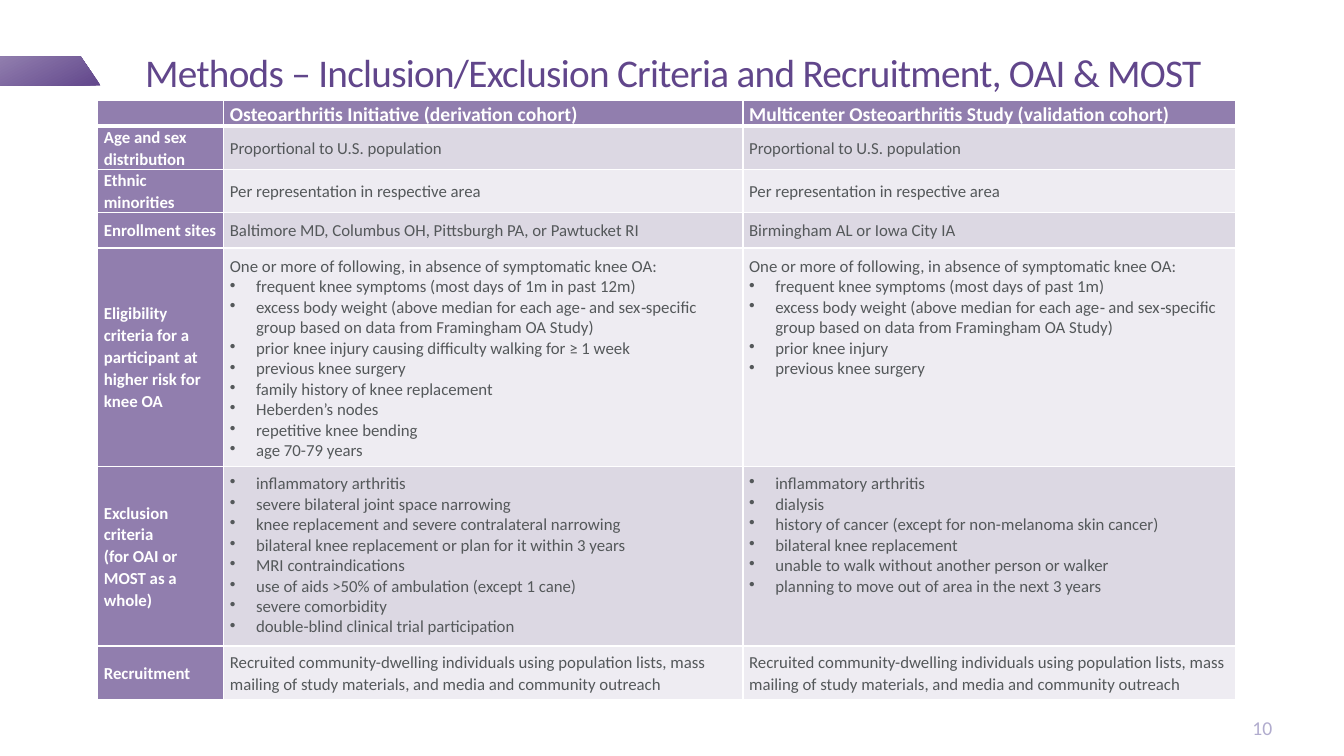
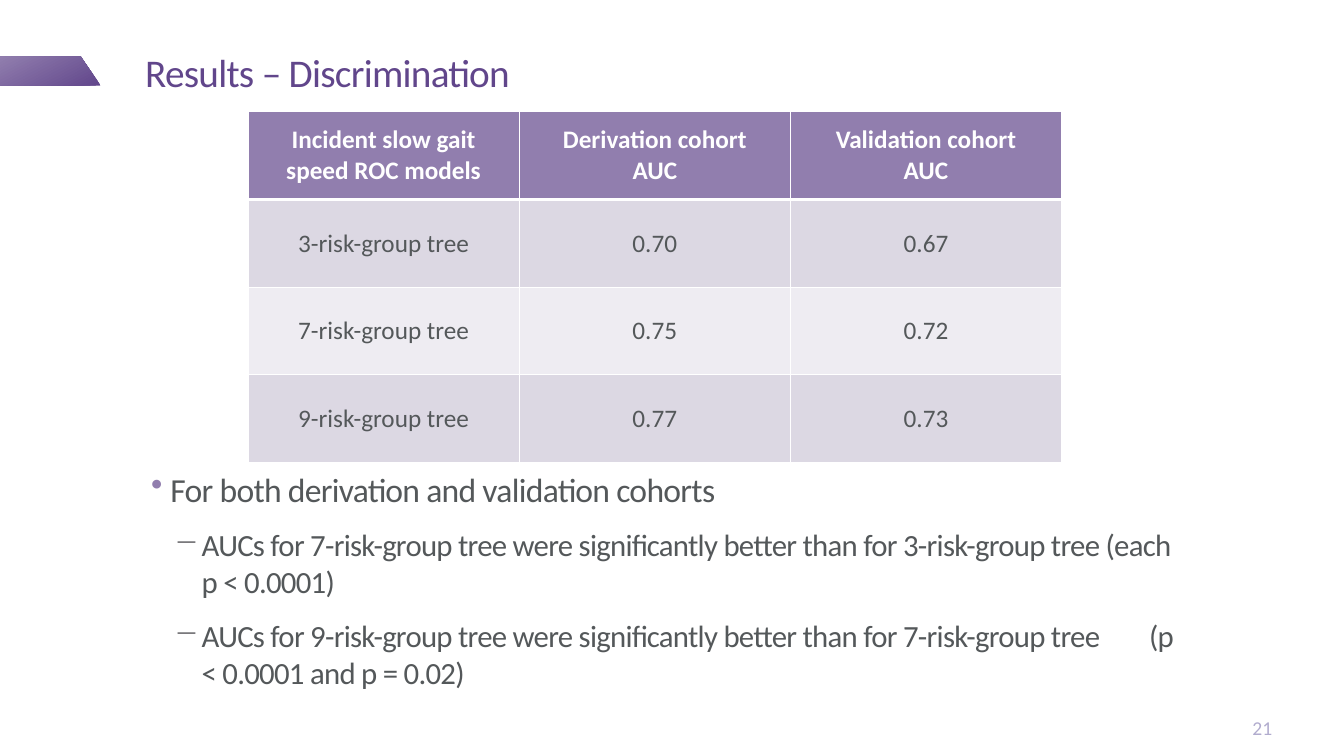
from lxml import etree
from pptx import Presentation
from pptx.dml.color import RGBColor
from pptx.enum.text import MSO_ANCHOR, PP_ALIGN
from pptx.oxml.ns import qn
from pptx.util import Inches, Pt

LEFT, CENTER, RIGHT = PP_ALIGN.LEFT, PP_ALIGN.CENTER, PP_ALIGN.RIGHT
TOP, MIDDLE, BOTTOM = MSO_ANCHOR.TOP, MSO_ANCHOR.MIDDLE, MSO_ANCHOR.BOTTOM

PURPLE, VIOLET, LILAC = "61468B", "917EAE", "B1ACCE"
WHITE, GRAY, DASH_GRAY = "FFFFFF", "54585A", "605F62"
BANDS = ("DCD8E3", "EEECF2")
BULLET = "• "
TIGHT = -50
WIDE_GAP = 3000


def rgb(value):
    return RGBColor.from_string(value)


def apply(target, values):
    for name, value in values.items():
        setattr(target, name, value)


def add_color(parent, tag, color):
    element = etree.SubElement(parent, qn(tag))
    etree.SubElement(element, qn("a:srgbClr")).set("val", color)


class Deck:
    font = "Calibri"

    def __init__(self):
        self.presentation = Presentation()
        self.presentation.slide_width = Inches(13.33)
        self.presentation.slide_height = Inches(7.5)
        self.slide = None

    def add_slide(self, title, number):
        layout = self.presentation.slide_layouts[6]
        self.slide = self.presentation.slides.add_slide(layout)
        self.add_band()
        frame = self.add_text_box((1.44, 0.17, 11.25, 0.83), BOTTOM)
        self.set_text(frame.paragraphs[0], title, 28, PURPLE,
                      spacing=TIGHT, line_spacing=0.85)
        frame = self.add_text_box((12.11, 7.09, 0.51, 0.25), BOTTOM,
                                  margin_right=0, margin_bottom=0, word_wrap=False)
        self.set_text(frame.paragraphs[0], number, 14, LILAC, alignment=RIGHT)

    def add_band(self):
        builder = self.slide.shapes.build_freeform(Inches(0), Inches(0.56))
        corners = [(0.8, 0.56), (1, 0.85), (0, 0.85)]
        builder.add_line_segments([(Inches(x), Inches(y)) for x, y in corners])
        shape = builder.convert_to_shape()
        shape.shadow.inherit = False
        shape.line.fill.background()
        shape.fill.gradient()
        shape.fill.gradient_angle = 118
        for stop, color, position in zip(shape.fill.gradient_stops, (PURPLE, VIOLET), (0, 1)):
            stop.color.rgb = rgb(color)
            stop.position = position

    def add_text_box(self, box, anchor, **values):
        frame = self.slide.shapes.add_textbox(*map(Inches, box)).text_frame
        defaults = {
            "word_wrap": True, "vertical_anchor": anchor,
            "margin_left": 0, "margin_top": 0,
            "margin_right": Inches(0.1), "margin_bottom": Inches(0.05),
        }
        apply(frame, {**defaults, **values})
        return frame

    def set_text(self, paragraph, text, size, color, bold=False, spacing=0, **values):
        apply(paragraph, values)
        if not text:
            paragraph._p.get_or_add_endParaRPr().set("sz", str(size * 100))
        else:
            self.add_run(paragraph, text, size, color, bold, spacing)

    def add_run(self, paragraph, text, size, color, bold=False, spacing=0):
        run = paragraph.add_run()
        run.text = text
        apply(run.font, {"name": self.font, "size": Pt(size), "bold": bold})
        run.font.color.rgb = rgb(color)
        if spacing:
            run._r.get_or_add_rPr().set("spc", str(spacing))

    def set_bullet(self, paragraph, character, color, margin, hanging):
        properties = paragraph._p.get_or_add_pPr()
        properties.set("marL", str(Inches(margin)))
        properties.set("indent", str(-Inches(hanging)))
        add_color(properties, "a:buClr", color)
        etree.SubElement(properties, qn("a:buChar")).set("char", character)

    def add_points(self, box, points):
        frame = self.add_text_box(box, TOP)
        for index, (level, pieces) in enumerate(points):
            paragraph = frame.add_paragraph() if index else frame.paragraphs[0]
            if level:
                self.set_bullet(paragraph, "−", DASH_GRAY, 0.5, 0.27)
            else:
                self.set_bullet(paragraph, "•", VIOLET, 0.19, 0.19)
            apply(paragraph, {"space_before": Pt(6 if index else 0), "space_after": Pt(6)})
            for text, spacing in pieces:
                self.add_run(paragraph, text, 22 if level else 24, GRAY, spacing=spacing)

    def set_borders(self, cell, top, bottom):
        properties = cell._tc.get_or_add_tcPr()
        for side, width in (("L", 1), ("R", 1), ("T", top), ("B", bottom)):
            line = etree.SubElement(properties, qn("a:ln" + side))
            line.set("w", str(Pt(width)))
            add_color(line, "a:solidFill", WHITE)

    def fill_cell(self, cell, text, size, color, bold, line_spacing, alignment):
        lines = text.split("\n")
        for index, line in enumerate(lines):
            paragraph = cell.text_frame.add_paragraph() if index else cell.text_frame.paragraphs[0]
            bulleted = line.startswith(BULLET)
            if bulleted:
                self.set_bullet(paragraph, "•", color, 0.26, 0.26)
            self.set_text(paragraph, line.removeprefix(BULLET), size, color, bold,
                          line_spacing=1.0 if bulleted else line_spacing, alignment=alignment)
        if lines[-1].startswith(BULLET):
            apply(cell, {"vertical_anchor": TOP, "margin_top": Inches(0.07)})

    def add_table(self, position, columns, heights, rows, sizes, margins,
                  label_column=False, line_spacing=1.0, alignment=LEFT):
        left, top = position
        shape = self.slide.shapes.add_table(
            len(rows), len(columns), Inches(left), Inches(top),
            Inches(sum(columns)), Inches(sum(heights)))
        table = shape.table
        for column, width in zip(table.columns, columns):
            column.width = Inches(width)
        for row, height in zip(table.rows, heights):
            row.height = Inches(height)
        side, edge = map(Inches, margins)
        cell_format = {"vertical_anchor": MIDDLE, "margin_left": side, "margin_right": side,
                       "margin_top": edge, "margin_bottom": edge}
        for r, texts in enumerate(rows):
            for c, text in enumerate(texts):
                cell = table.cell(r, c)
                heading = r == 0 or (label_column and c == 0)
                apply(cell, cell_format)
                self.set_borders(cell, 3 if r == 1 else 1, 3 if r == 0 else 1)
                cell.fill.solid()
                cell.fill.fore_color.rgb = rgb(VIOLET if heading else BANDS[(r - 1) % 2])
                self.fill_cell(cell, text, sizes[min(r, 1)], WHITE if heading else GRAY,
                               heading, line_spacing, alignment)


POPULATION = "Proportional to U.S. population"
REPRESENTATION = "Per representation in respective area"
RISK_INTRO = "One or more of following, in absence of symptomatic knee OA:"
BODY_WEIGHT = ("• excess body weight (above median for each age‐ and sex‐specific "
               "group based on data from Framingham OA Study)")
RECRUITMENT = ("Recruited community-dwelling individuals using population lists, mass "
               "mailing of study materials, and media and community outreach")

CRITERIA = [
    ("", "Osteoarthritis Initiative (derivation cohort)",
     "Multicenter Osteoarthritis Study (validation cohort)"),
    ("Age and sex distribution", POPULATION, POPULATION),
    ("Ethnic minorities", REPRESENTATION, REPRESENTATION),
    ("Enrollment sites", "Baltimore MD, Columbus OH, Pittsburgh PA, or Pawtucket RI",
     "Birmingham AL or Iowa City IA"),
    ("Eligibility criteria for a participant at higher risk for knee OA",
     f"""{RISK_INTRO}
• frequent knee symptoms (most days of 1m in past 12m)
{BODY_WEIGHT}
• prior knee injury causing difficulty walking for ≥ 1 week
• previous knee surgery
• family history of knee replacement
• Heberden’s nodes
• repetitive knee bending
• age 70-79 years""",
     f"""{RISK_INTRO}
• frequent knee symptoms (most days of past 1m)
{BODY_WEIGHT}
• prior knee injury
• previous knee surgery"""),
    ("Exclusion criteria\n(for OAI or MOST as a whole)",
     """• inflammatory arthritis
• severe bilateral joint space narrowing
• knee replacement and severe contralateral narrowing
• bilateral knee replacement or plan for it within 3 years
• MRI contraindications
• use of aids >50% of ambulation (except 1 cane)
• severe comorbidity
• double-blind clinical trial participation""",
     """• inflammatory arthritis
• dialysis
• history of cancer (except for non-melanoma skin cancer)
• bilateral knee replacement
• unable to walk without another person or walker
• planning to move out of area in the next 3 years"""),
    ("Recruitment", RECRUITMENT, RECRUITMENT),
]

DISCRIMINATION = [
    ("Incident slow gait speed ROC models", "Derivation cohort\nAUC", "Validation cohort\nAUC"),
    ("3-risk-group tree", "0.70", "0.67"),
    ("7-risk-group tree", "0.75", "0.72"),
    ("9-risk-group tree", "0.77", "0.73"),
]

FINDINGS = [
    (0, [("For both derivation and validation cohorts", TIGHT)]),
    (1, [("AUCs for 7-risk-group tree were significantly better than for "
          "3-risk-group tree (each p < 0.0001)", TIGHT)]),
    (1, [("AUCs for 9-risk-group tree were significantly better than for "
          "7-risk-group tree", TIGHT),
         (" ", WIDE_GAP),
         ("(p < 0.0001 and p = 0.02)", TIGHT)]),
]


def main():
    deck = Deck()
    deck.add_slide("Methods – Inclusion/Exclusion Criteria and Recruitment, OAI & MOST", "10")
    deck.add_table((0.97, 1), (1.25, 5.15, 4.88), (0.24, 0.43, 0.43, 0.35, 2.17, 1.78, 0.53),
                   CRITERIA, (14, 12), (0.06, 0), label_column=True, line_spacing=1.07)
    deck.add_slide("Results – Discrimination", "21")
    deck.add_points((1.5, 4.65, 10.25, 2.19), FINDINGS)
    deck.add_table((2.46, 1.11), [2.69] * 3, [0.87] * 4,
                   DISCRIMINATION, (18, 18), (0.1, 0.05), alignment=CENTER)
    deck.presentation.save("out.pptx")


if __name__ == "__main__":
    main()
